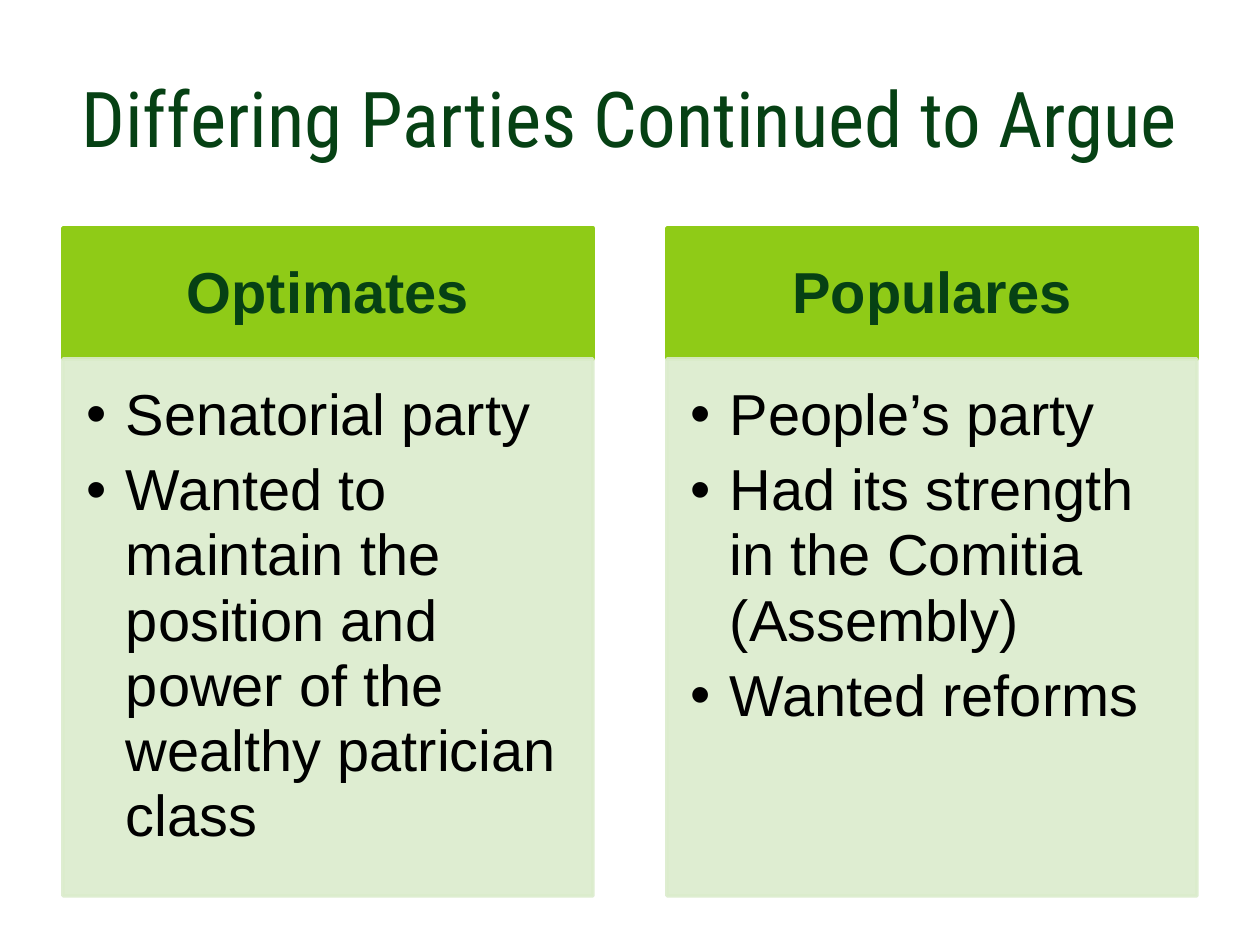
from lxml.etree import SubElement
from pptx import Presentation
from pptx.dml.color import RGBColor
from pptx.enum.shapes import MSO_SHAPE as Shape
from pptx.enum.text import MSO_ANCHOR as Anchor, PP_ALIGN as Align
from pptx.oxml.ns import qn
from pptx.util import Emu, Pt

PX = 914400 / 126
COLORS = {"heading": "064114", "header": "8FCB17", "body": "DBECCC", "text": "000000"}
PARTIES = [
    ("Optimates", [
        "Senatorial party",
        "Wanted to maintain the position and power of the wealthy patrician class",
    ]),
    ("Populares", [
        "People’s party",
        "Had its strength in the Comitia (Assembly)",
        "Wanted reforms",
    ]),
]


def px(length):
    """Turn a length in px into EMU."""
    return Emu(round(length * PX))


def set_insets(frame, left, top, right, bottom):
    """Set the four text margins and turn on wrapping."""
    frame.word_wrap = True
    frame.margin_left, frame.margin_top = px(left), px(top)
    frame.margin_right, frame.margin_bottom = px(right), px(bottom)


def style(paragraph, font_name, size, color, bold=False):
    """Format every run of a paragraph."""
    for run in paragraph.runs:
        run.font.name, run.font.size, run.font.bold = font_name, Pt(size), bold
        run.font.color.rgb = RGBColor.from_string(COLORS[color])


def add_bullet(paragraph, indent):
    """Give a paragraph a hanging round bullet."""
    properties = paragraph._p.get_or_add_pPr()
    properties.set("marL", str(px(indent)))
    properties.set("indent", str(-px(indent)))
    SubElement(properties, qn("a:buFont"), typeface="Arial")
    SubElement(properties, qn("a:buChar"), char="•")


def add_panel(slide, box, color, opacity=100):
    """Add a rectangle whose fill and outline share one colour."""
    panel = slide.shapes.add_shape(Shape.RECTANGLE, *map(px, box))
    panel.shadow.inherit = False
    panel.fill.solid()
    panel.line.width = Pt(2)
    for fill in (panel.fill, panel.line.fill):
        fill.solid()
        fill.fore_color.rgb = RGBColor.from_string(COLORS[color])
    if opacity < 100:
        for tint in panel._element.spPr.iter(qn("a:srgbClr")):
            SubElement(tint, qn("a:alpha"), val=str(opacity * 1000))
    return panel


def add_title(slide, box, wording):
    """Add the centred slide title."""
    frame = slide.shapes.add_textbox(*map(px, box)).text_frame
    set_insets(frame, 12, 6, 12, 6)
    frame.vertical_anchor = Anchor.MIDDLE
    frame.text = wording
    heading = frame.paragraphs[0]
    heading.alignment = Align.CENTER
    style(heading, "Roboto Condensed", 44, "heading")


def add_party(slide, box, party, views, header_height=131):
    """Add one party column: a header above its list of views."""
    left, top, width, height = box
    header = add_panel(slide, (left, top, width, header_height), "header").text_frame
    set_insets(header, 33, 19, 33, 19)
    header.vertical_anchor = Anchor.MIDDLE
    header.text = party
    heading = header.paragraphs[0]
    heading.alignment = Align.CENTER
    heading.line_spacing = 0.94
    style(heading, "Arial", 33, "heading", bold=True)

    body_box = (left, top + header_height, width, height - header_height)
    body = add_panel(slide, body_box, "body", opacity=90).text_frame
    set_insets(body, 24, 24, 33, 37)
    body.vertical_anchor = Anchor.TOP
    body.text = "\n".join(views)
    for view in body.paragraphs:
        view.alignment = Align.LEFT
        view.line_spacing = 0.94
        view.space_after = Pt(6)
        add_bullet(view, 39)
        style(view, "Arial", 33, "text")


def main():
    """Build the slide and save it."""
    deck = Presentation()
    deck.slide_width, deck.slide_height = px(1260), px(945)
    slide = deck.slides.add_slide(deck.slide_layouts[6])
    add_title(slide, (42, 38, 1176, 157), "Differing Parties Continued to Argue")
    width, gap = 530, 74
    for column, (party, views) in enumerate(PARTIES):
        add_party(slide, (63 + column * (width + gap), 228, width, 668), party, views)
    deck.save("out.pptx")


if __name__ == "__main__":
    main()
